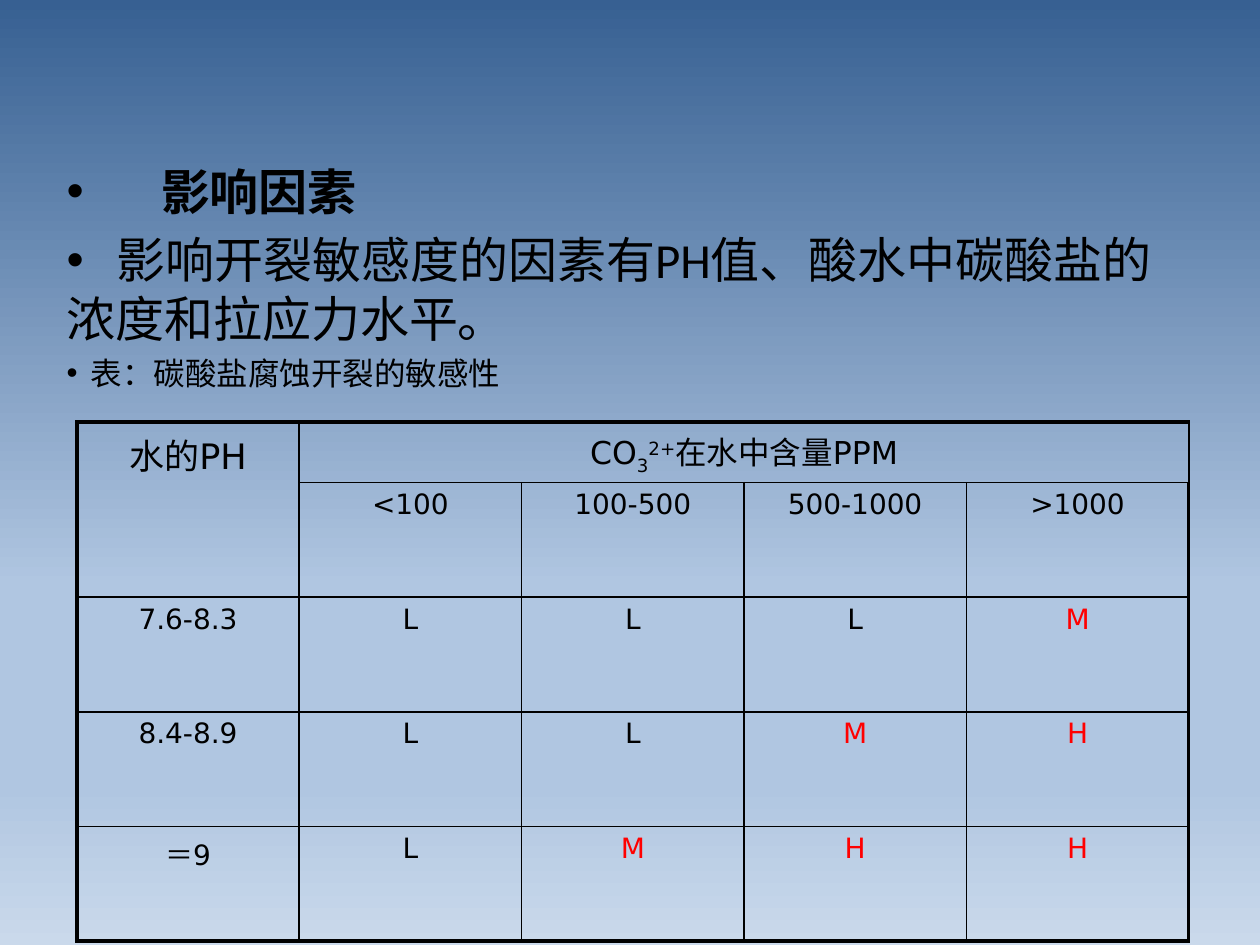
from dataclasses import dataclass

from pptx import Presentation
from pptx.dml.color import RGBColor
from pptx.enum.text import PP_ALIGN
from pptx.oxml.ns import qn
from pptx.util import Inches, Pt
from lxml import etree

CENTER = PP_ALIGN.CENTER


@dataclass(frozen=True)
class Theme:
    ink: str = "000000"
    alert: str = "FF0000"
    body_font: str = "Calibri"
    table_font: str = "DejaVu Sans"
    body_size: int = 28
    caption_size: int = 18
    corner_size: int = 20
    header_size: int = 18
    cell_size: int = 16
    inner_line: float = 1
    outer_line: float = 2.25
    backdrop: tuple = ((0, "376092"), (62, "B0C6E1"), (83, "B0C6E1"), (100, "CAD9EB"))


def add_node(parent, tag, **attributes):
    return etree.SubElement(parent, qn(tag), {key: str(value) for key, value in attributes.items()})


class SlideBuilder:
    def __init__(self, slide, theme):
        self.slide = slide
        self.theme = theme

    def background(self):
        fill = self.slide.background.fill
        fill.gradient()
        fill.gradient_angle = 270
        stops = self.slide._element.find(".//" + qn("a:gsLst"))
        for stop in list(stops):
            stops.remove(stop)
        for position, color in self.theme.backdrop:
            stop = add_node(stops, "a:gs", pos=position * 1000)
            add_node(stop, "a:srgbClr", val=color)

    def span(self, para, text, format_values, color, baseline=0):
        span = para.add_run()
        span.text = text
        for name, value in format_values.items():
            setattr(span.font, name, value)
        span.font.color.rgb = RGBColor.from_string(color)
        if baseline:
            span._r.get_or_add_rPr().set("baseline", str(baseline * 1000))

    def bullet(self, para, offset, hanging):
        """Start the text at offset; without hanging, later lines return to the left edge."""
        props = para._p.get_or_add_pPr()
        margin = Inches(offset) if hanging else 0
        props.set("marL", str(margin))
        props.set("indent", str(-margin))
        add_node(props, "a:buFont", typeface="Arial")
        add_node(props, "a:buChar", char="•")
        if not hanging:
            tabs = add_node(props, "a:tabLst")
            add_node(tabs, "a:tab", pos=Inches(offset), algn="l")

    def bullet_list(self, left, top, width, height, items):
        box = self.slide.shapes.add_textbox(*map(Inches, (left, top, width, height)))
        frame = box.text_frame
        frame.word_wrap = True
        for index, (text, size, bold, offset, hanging) in enumerate(items):
            para = frame.add_paragraph() if index else frame.paragraphs[0]
            self.bullet(para, offset, hanging)
            if index:
                para.space_before = Pt(size * 0.2)
            values = {"name": self.theme.body_font, "size": Pt(size), "bold": bold}
            self.span(para, text if hanging else "\t" + text, values, self.theme.ink)

    def cell_text(self, cell, spans, size, color):
        para = cell.text_frame.paragraphs[0]
        para.alignment = CENTER
        values = {"name": self.theme.table_font, "size": Pt(size), "bold": False}
        for text, baseline in spans:
            self.span(para, text, values, color, baseline)

    def cell_borders(self, cell, outer_sides):
        props = cell._tc.get_or_add_tcPr()
        for index, side in enumerate("LRTB"):
            width = self.theme.outer_line if side in outer_sides else self.theme.inner_line
            line = etree.Element(qn("a:ln" + side), w=str(Pt(width)))
            add_node(add_node(line, "a:solidFill"), "a:srgbClr", val=self.theme.ink)
            props.insert(index, line)

    def table(self, left, top, widths, heights):
        frame = self.slide.shapes.add_table(
            len(heights), len(widths), Inches(left), Inches(top),
            Inches(sum(widths)), Inches(sum(heights)))
        table = frame.table
        table.first_row = table.horz_banding = False
        for column, width in zip(table.columns, widths):
            column.width = Inches(width)
        for row, height in zip(table.rows, heights):
            row.height = Inches(height)
        last_row, last_column = len(heights) - 1, len(widths) - 1
        for r in range(len(heights)):
            for c in range(len(widths)):
                cell = table.cell(r, c)
                cell.fill.background()
                edges = {"L": c == 0, "R": c == last_column, "T": r == 0, "B": r == last_row}
                self.cell_borders(cell, [side for side, outer in edges.items() if outer])
        return table

    def sensitivity_table(self, left, top, rows):
        theme = self.theme
        table = self.table(left, top, [1.765] * 5, [0.48] + [0.91] * 4)
        corner, header = table.cell(0, 0), table.cell(0, 1)
        corner.merge(table.cell(1, 0))
        header.merge(table.cell(0, 4))
        self.cell_text(corner, [("水的PH", 0)], theme.corner_size, theme.ink)
        header_spans = [("CO", 0), ("3", -25), ("2+", 30), ("在水中含量PPM", 0)]
        self.cell_text(header, header_spans, theme.header_size, theme.ink)
        for r, row in enumerate(rows, start=1):
            for c, text in enumerate(row):
                if text:
                    color = theme.alert if text in ("M", "H") else theme.ink
                    self.cell_text(table.cell(r, c), [(text, 0)], theme.cell_size, color)


def main():
    deck = Presentation()
    deck.slide_width, deck.slide_height = Inches(10), Inches(7.5)
    theme = Theme()
    page = SlideBuilder(deck.slides.add_slide(deck.slide_layouts[6]), theme)
    page.background()
    page.bullet_list(0.43, 1.23, 9.15, 2.05, [
        ("影响因素", theme.body_size, True, 0.75, True),
        ("影响开裂敏感度的因素有PH值、酸水中碳酸盐的浓度和拉应力水平。",
         theme.body_size, False, 0.4, False),
        ("表：碳酸盐腐蚀开裂的敏感性", theme.caption_size, False, 0.19, True),
    ])
    page.sensitivity_table(0.61, 3.35, [
        ("", "<100", "100-500", "500-1000", ">1000"),
        ("7.6-8.3", "L", "L", "L", "M"),
        ("8.4-8.9", "L", "L", "M", "H"),
        ("＝9", "L", "M", "H", "H"),
    ])
    deck.save("out.pptx")


if __name__ == "__main__":
    main()
